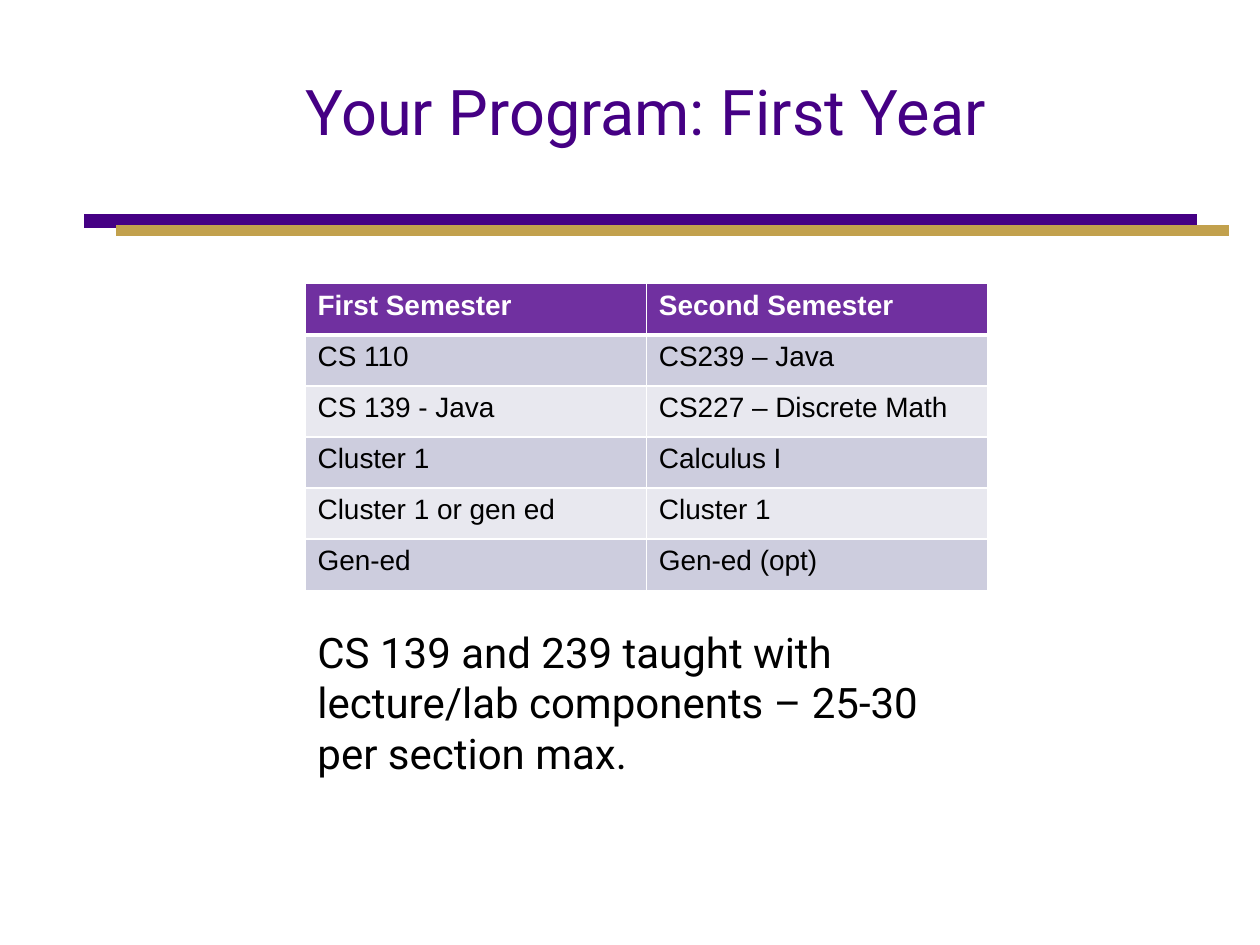
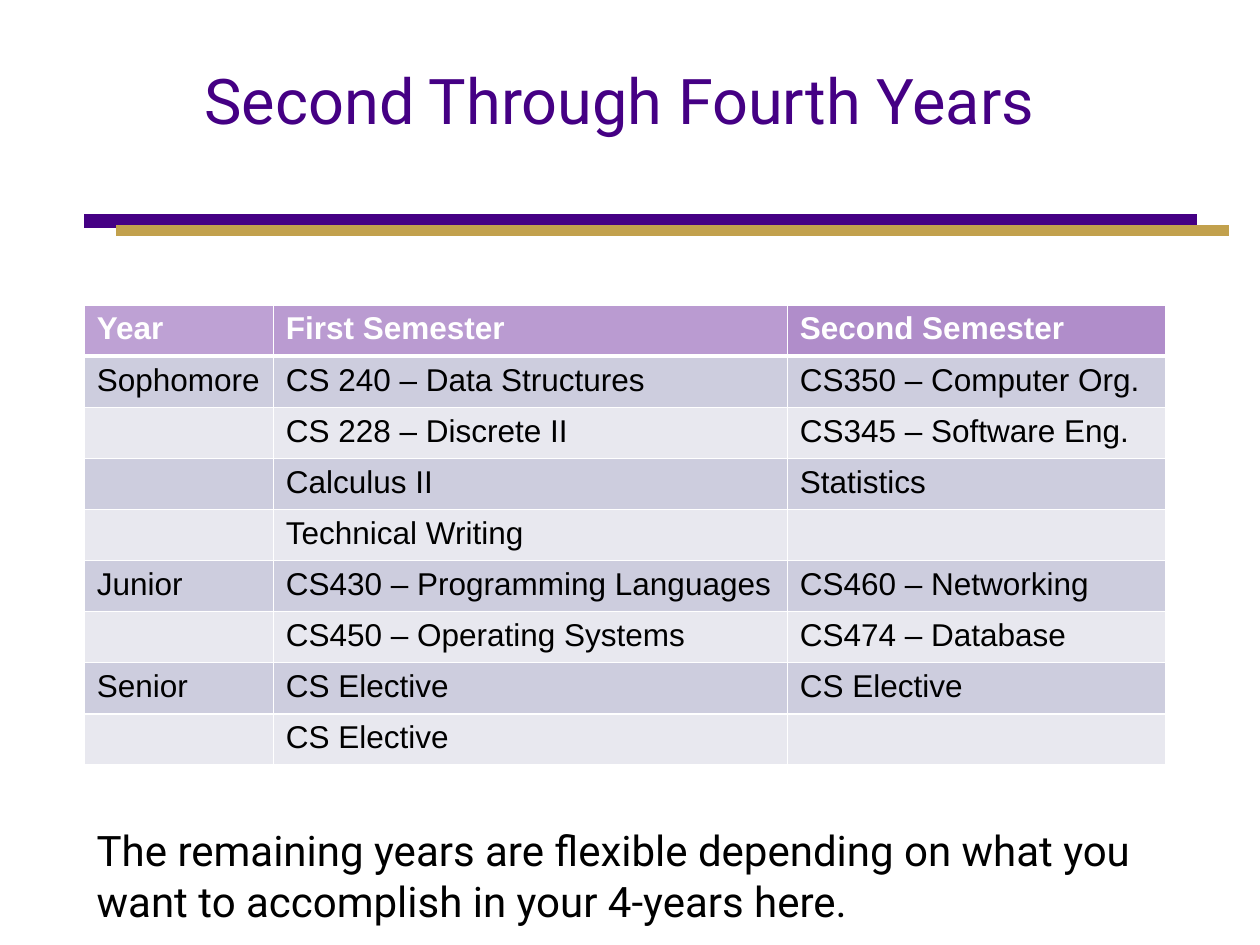
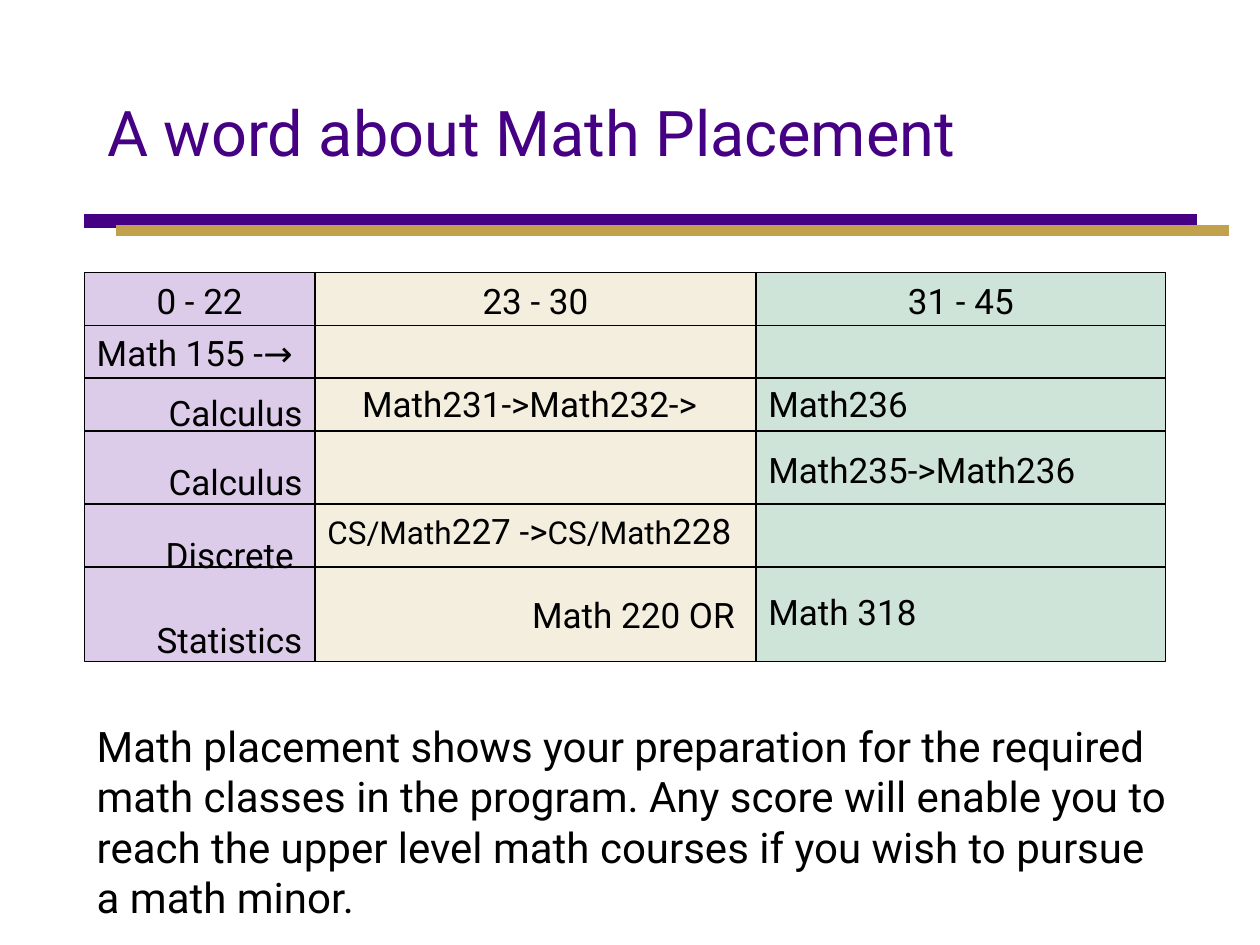
import itertools

import lxml.etree
import pptx
import pptx.dml.color
import pptx.enum.shapes
import pptx.enum.text
import pptx.oxml.ns
import pptx.util

Cm = pptx.util.Cm
Pt = pptx.util.Pt
RGBColor = pptx.dml.color.RGBColor
ALIGN = pptx.enum.text.PP_ALIGN
qn = pptx.oxml.ns.qn

PURPLE = RGBColor(0x45, 0x00, 0x84)
GOLD = RGBColor(0xC2, 0xA1, 0x4D)
VIOLET = RGBColor(0x58, 0x00, 0x94)
GREEN = RGBColor(0x00, 0x70, 0x33)
HEADER = RGBColor(0x70, 0x30, 0xA0)
BANDS = (RGBColor(0xCD, 0xCD, 0xDE), RGBColor(0xE8, 0xE8, 0xEF))
BLACK = RGBColor(0, 0, 0)
WHITE = RGBColor(0xFF, 0xFF, 0xFF)

# Positions and sizes are in centimetres
LEFT = 1.7
ROW_HEIGHT = 1.03
TITLE_BARS = [(LEFT, 4.45, PURPLE, 8), (2.34, 4.65, GOLD, 6)]
BAR_LENGTH = 22.43

COURSE_SLIDES = [
    {
        "title": "Your Program: First Year",
        "title_box": (2.54, 0.64, 20.96, 3.18),
        "table_at": (6.15, 5.72),
        "widths": (6.88, 6.88),
        "size": 16,
        "header_opacity": (100, 100),
        "rows": [
            ("First Semester", "Second Semester"),
            ("CS 110", "CS239 – Java"),
            ("CS 139 - Java", "CS227 – Discrete Math"),
            ("Cluster 1", "Calculus I"),
            ("Cluster 1 or gen ed", "Cluster 1"),
            ("Gen-ed", "Gen-ed (opt)"),
        ],
        "note": "CS 139 and 239 taught with lecture/lab components – 25-30 per section max.",
        "note_box": (6.15, 12.5, 13.97, 1.8),
    },
    {
        "title": "Second Through Fourth Years",
        "title_box": (1.27, 0.42, 22.44, 3.18),
        "table_at": (LEFT, 6.15),
        "widths": (3.81, 10.36, 7.62),
        "size": 18,
        "header_opacity": (45, 48, 55),
        "rows": [
            ("Year", "First Semester", "Second Semester"),
            ("Sophomore", "CS 240 – Data Structures", "CS350 – Computer Org."),
            ("", "CS 228 – Discrete II", "CS345 – Software Eng."),
            ("", "Calculus II", "Statistics"),
            ("", "Technical Writing", ""),
            ("Junior", "CS430 – Programming Languages", "CS460 – Networking"),
            ("", "CS450 – Operating Systems", "CS474 – Database"),
            ("Senior", "CS Elective", "CS Elective"),
            ("", "CS Elective", ""),
        ],
        "note": "The remaining years are flexible depending on what you "
                "want to accomplish in your 4-years here.",
        "note_box": (LEFT, 16.5, 22.23, 2.31),
    },
]

PLACEMENT_TITLE = "A word about Math Placement"
PLACEMENT_TITLE_BOX = (1.91, 1.06, 22.23, 3.18)
SCORE_TOP, SCORE_HEIGHT = 5.5, 1.06
COURSE_HEIGHT = 6.77
RULES = (7.62, 8.69, 10.16, 11.43)
# Each course is its text and its paragraph format
PLACEMENT_COLUMNS = [
    {
        "score": "0 - 22", "width": 4.65, "color": VIOLET, "opacity": 20, "inset": 0.13,
        "courses": [
            ("Math 155 -→", {}),
            ("Calculus", {"align": ALIGN.RIGHT, "before": 10}),
            ("Calculus", {"align": ALIGN.RIGHT, "before": 15.5}),
            ("Discrete ", {"align": ALIGN.RIGHT, "before": 17.5}),
            ("Statistics", {"align": ALIGN.RIGHT, "before": 24.5}),
        ],
    },
    {
        "score": "23 - 30", "width": 8.89, "color": GOLD, "opacity": 18, "inset": 1.15,
        "courses": [
            ("Math231->Math232->", {"indent": 0.7}),
            ([("CS/Math", 18), ("227 ->", 20), ("CS/Math", 18), ("228", 20)], {"before": 48.5}),
            ("Math 220 OR ", {"align": ALIGN.RIGHT, "before": 24}),
        ],
    },
    {
        "score": "31 - 45", "width": 8.26, "color": GREEN, "opacity": 19, "inset": 1.15,
        "courses": [
            ("Math236", {}),
            ("Math235->Math236", {"before": 13.5}),
            ("Math 318", {"before": 57.5}),
        ],
    },
]
PLACEMENT_NOTE = [
    "Math placement shows your preparation for the required",
    "math classes in the program. Any score will enable you to",
    "reach the upper level math courses if you wish to pursue",
    "a math minor.",
]
PLACEMENT_NOTE_BOX = (LEFT, 14.4, 22.56, 4.37)


def write(paragraph, text, size=20, font="Roboto", color=BLACK, bold=False,
          align=ALIGN.LEFT, before=0, indent=0):
    """Fill a paragraph from a string or a list of (text, size) runs."""
    paragraph.alignment = align
    paragraph.space_before = Pt(before)
    if indent:
        paragraph._p.get_or_add_pPr().set("marL", str(Cm(indent)))
    paragraph.font.size = Pt(size)
    for run_text, run_size in [(text, size)] if isinstance(text, str) else text:
        run = paragraph.add_run()
        run.text = run_text
        run.font.size = Pt(run_size)
        run.font.name = font
        run.font.color.rgb = color
        run.font.bold = bold


def write_lines(frame, lines):
    """Write (text, format) pairs as the paragraphs of a text frame."""
    for number, (text, text_format) in enumerate(lines):
        paragraph = frame.add_paragraph() if number else frame.paragraphs[0]
        write(paragraph, text, **text_format)


def add_text(slide, box, lines, wrap=True, anchor=pptx.enum.text.MSO_ANCHOR.TOP):
    frame = slide.shapes.add_textbox(*map(Cm, box)).text_frame
    frame.word_wrap = wrap
    frame.vertical_anchor = anchor
    write_lines(frame, lines)


def set_fill(fill, color, opacity=100):
    fill.solid()
    fill.fore_color.rgb = color
    if opacity < 100:
        color_element = fill._xPr.find(qn("a:solidFill"))[0]
        lxml.etree.SubElement(color_element, qn("a:alpha"), val=str(opacity * 1000))


def add_rule(slide, left, top, length, color, weight):
    rule = slide.shapes.add_connector(
        pptx.enum.shapes.MSO_CONNECTOR.STRAIGHT,
        Cm(left), Cm(top), Cm(left + length), Cm(top))
    rule.line.color.rgb = color
    rule.line.width = Pt(weight)
    lxml.etree.SubElement(rule._element.spPr, qn("a:effectLst"))


def add_titled_slide(presentation, title, box, align=ALIGN.CENTER):
    slide = presentation.slides.add_slide(presentation.slide_layouts[6])
    for left, top, color, weight in TITLE_BARS:
        add_rule(slide, left, top, BAR_LENGTH, color, weight)
    add_text(slide, box, [(title, {"size": 36, "color": PURPLE, "align": align})],
             anchor=pptx.enum.text.MSO_ANCHOR.MIDDLE)
    return slide


def set_borders(cell, top, bottom):
    """Give a cell white borders; the side borders are 1 point."""
    properties = cell._tc.get_or_add_tcPr()
    weights = {"a:lnL": 1, "a:lnR": 1, "a:lnT": top, "a:lnB": bottom}
    for position, (tag, weight) in enumerate(weights.items()):
        border = lxml.etree.Element(qn(tag), w=str(Pt(weight)))
        fill = lxml.etree.SubElement(border, qn("a:solidFill"))
        lxml.etree.SubElement(fill, qn("a:srgbClr"), val=str(WHITE))
        properties.insert(position, border)


def add_course_table(slide, content):
    rows, widths = content["rows"], content["widths"]
    table = slide.shapes.add_table(
        len(rows), len(widths), *map(Cm, content["table_at"]),
        Cm(sum(widths)), Cm(ROW_HEIGHT * len(rows))).table
    for column, width in zip(table.columns, widths):
        column.width = Cm(width)
    for row_number, row in enumerate(rows):
        table.rows[row_number].height = Cm(ROW_HEIGHT)
        header = row_number == 0
        for column_number, text in enumerate(row):
            cell = table.cell(row_number, column_number)
            if header:
                set_fill(cell.fill, HEADER, content["header_opacity"][column_number])
            else:
                set_fill(cell.fill, BANDS[(row_number - 1) % 2])
            set_borders(cell, top=3 if row_number == 1 else 1, bottom=3 if header else 1)
            write(cell.text_frame.paragraphs[0], text, size=content["size"], font="Arial",
                  color=WHITE if header else BLACK, bold=header)


def add_course_slide(presentation, content):
    slide = add_titled_slide(presentation, content["title"], content["title_box"])
    add_course_table(slide, content)
    add_text(slide, content["note_box"], [(content["note"], {"size": 24})])


def add_panel(slide, box, column, lines, inset=0.13):
    panel = slide.shapes.add_shape(pptx.enum.shapes.MSO_SHAPE.RECTANGLE, *map(Cm, box))
    panel.shadow.inherit = False
    set_fill(panel.fill, column["color"], column["opacity"])
    panel.line.color.rgb = BLACK
    panel.line.width = Pt(0.75)
    frame = panel.text_frame
    frame.word_wrap = True
    frame.vertical_anchor = pptx.enum.text.MSO_ANCHOR.TOP
    frame.margin_top = Cm(inset)
    write_lines(frame, lines)


def add_placement_slide(presentation):
    slide = add_titled_slide(presentation, PLACEMENT_TITLE, PLACEMENT_TITLE_BOX, ALIGN.LEFT)
    widths = [column["width"] for column in PLACEMENT_COLUMNS]
    lefts = itertools.accumulate(widths, initial=LEFT)
    for left, column in zip(lefts, PLACEMENT_COLUMNS):
        width = column["width"]
        add_panel(slide, (left, SCORE_TOP + SCORE_HEIGHT, width, COURSE_HEIGHT),
                  column, column["courses"], column["inset"])
        add_panel(slide, (left, SCORE_TOP, width, SCORE_HEIGHT),
                  column, [(column["score"], {"align": ALIGN.CENTER})])
    for top in RULES:
        add_rule(slide, LEFT, top, sum(widths), BLACK, 0.75)
    add_text(slide, PLACEMENT_NOTE_BOX,
             [(line, {"size": 24}) for line in PLACEMENT_NOTE], wrap=False)


def main():
    presentation = pptx.Presentation()
    presentation.slide_width = Cm(25.4)
    presentation.slide_height = Cm(19.05)
    for content in COURSE_SLIDES:
        add_course_slide(presentation, content)
    add_placement_slide(presentation)
    presentation.save("out.pptx")


if __name__ == "__main__":
    main()
